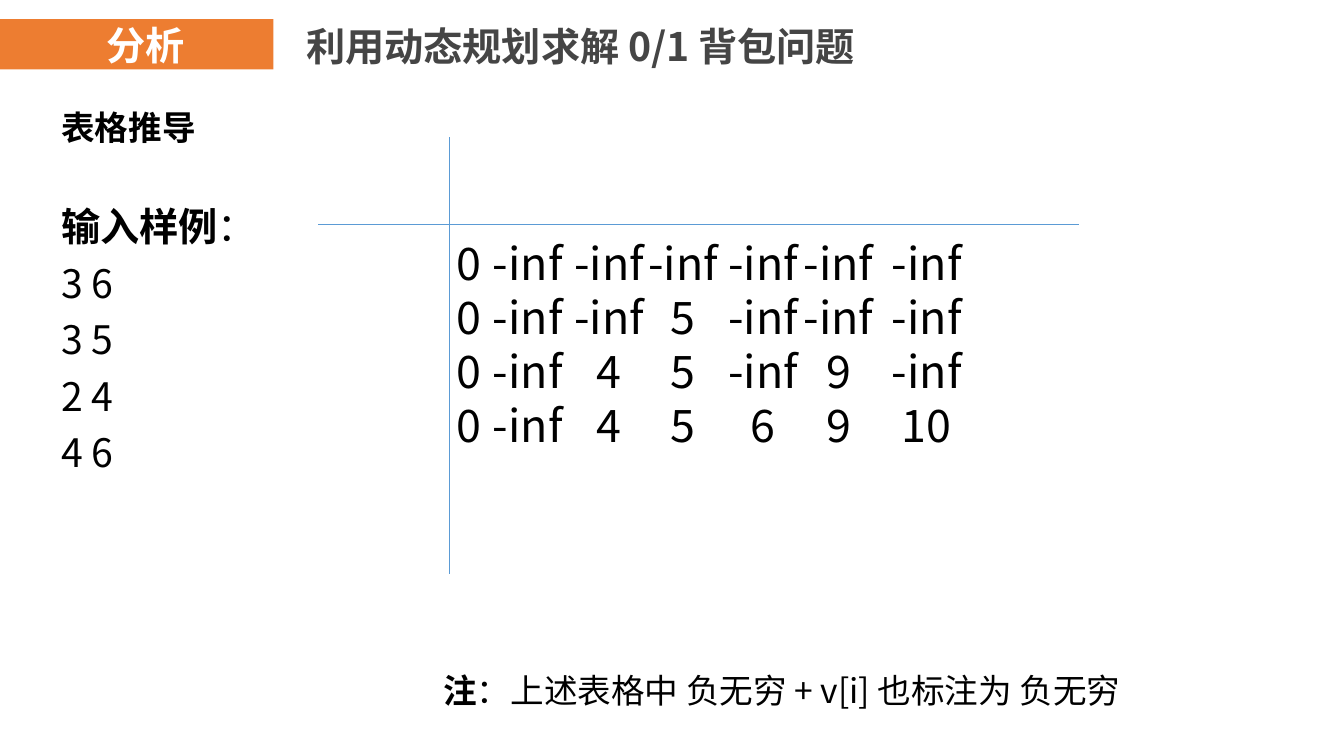
from lxml import etree
from pptx import Presentation
from pptx.dml.color import RGBColor
from pptx.enum.shapes import MSO_CONNECTOR, MSO_SHAPE
from pptx.oxml.ns import qn
from pptx.util import Pt

RECTANGLE = MSO_SHAPE.RECTANGLE
STRAIGHT = MSO_CONNECTOR.STRAIGHT
FONT = "Noto Sans CJK SC"
BLACK = RGBColor(0x00, 0x00, 0x00)
WHITE = RGBColor(0xFF, 0xFF, 0xFF)
GREY = RGBColor(0x45, 0x45, 0x45)
ORANGE = RGBColor(0xED, 0x7D, 0x31)
BLUE = RGBColor(0x5B, 0x9B, 0xD5)
SINGLE = 1.2  # line pitch as a multiple of the text size
LOOSE = 1.44

presentation = Presentation()
presentation.slide_width = Pt(960)
presentation.slide_height = Pt(540)
slide = presentation.slides.add_slide(presentation.slide_layouts[6])


def add_text(box, paragraphs, size, color=BLACK, pitch=SINGLE, wrap=True):
    """Add a text box; each paragraph is a list of (text, bold) runs."""
    frame = slide.shapes.add_textbox(*map(Pt, box)).text_frame
    frame.word_wrap = wrap
    for index, runs in enumerate(paragraphs):
        paragraph = frame.add_paragraph() if index else frame.paragraphs[0]
        paragraph.line_spacing = Pt(round(size * pitch, 1))
        for text, bold in runs:
            run = paragraph.add_run()
            run.text = text
            run.font.size = Pt(size)
            run.font.bold = bold
            run.font.color.rgb = color
            run.font.name = FONT
            east_asian = etree.SubElement(run.font._element, qn("a:ea"))
            east_asian.set("typeface", FONT)
    return frame


# Header banner and title
banner = slide.shapes.add_shape(RECTANGLE, Pt(-0.7), Pt(13.7), Pt(196), Pt(36))
banner.shadow.inherit = False
banner.fill.solid()
banner.fill.fore_color.rgb = ORANGE
banner.line.fill.background()
add_text((69, 11.5, 71, 41), [[("分析", True)]], 28, WHITE, wrap=False)
add_text((211.7, 12.2, 435, 41), [[("利用动态规划求解 0/1 背包问题", True)]], 28, GREY)

# Section heading and sample input
add_text((36.7, 67, 860, 42), [[("表格推导", True)]], 24, pitch=LOOSE)
sample = [[("输入样例", True), ("：", False)]]
sample += [[(line, False)] for line in ("3 6", "3 5", "2 4", "4 6")]
add_text((36.7, 134.6, 200, 211), sample, 28, pitch=LOOSE)

# Axes of the derivation table
for x1, y1, x2, y2 in ((321, 98, 321, 410), (227.5, 160.5, 771, 160.5)):
    axis = slide.shapes.add_connector(STRAIGHT, Pt(x1), Pt(y1), Pt(x2), Pt(y2))
    axis.line.color.rgb = BLUE
    axis.line.width = Pt(0.5)
    etree.SubElement(axis._element.spPr, qn("a:effectLst"))

# Derivation values, each column centred on a tab stop
VALUES = (
    "0 -inf -inf -inf -inf -inf -inf",
    "0 -inf -inf 5 -inf -inf -inf",
    "0 -inf 4 5 -inf 9 -inf",
    "0 -inf 4 5 6 9 10",
)
COLUMN_CENTRES = (37, 79, 137, 190, 247, 301, 364)
rows = [[("\t" + "\t".join(row.split()), False)] for row in VALUES]
values_frame = add_text((291, 165, 520, 162), rows, 32)
for paragraph in values_frame.paragraphs:
    tabs = etree.SubElement(paragraph._p.get_or_add_pPr(), qn("a:tabLst"))
    for centre in COLUMN_CENTRES:
        etree.SubElement(tabs, qn("a:tab"), pos=str(Pt(centre)), algn="ctr")

# Note
note = [[("注", True), ("：上述表格中 负无穷 + v[i] 也标注为 负无穷", False)]]
add_text((309.6, 475.2, 502, 36), note, 24)

presentation.save("out.pptx")
